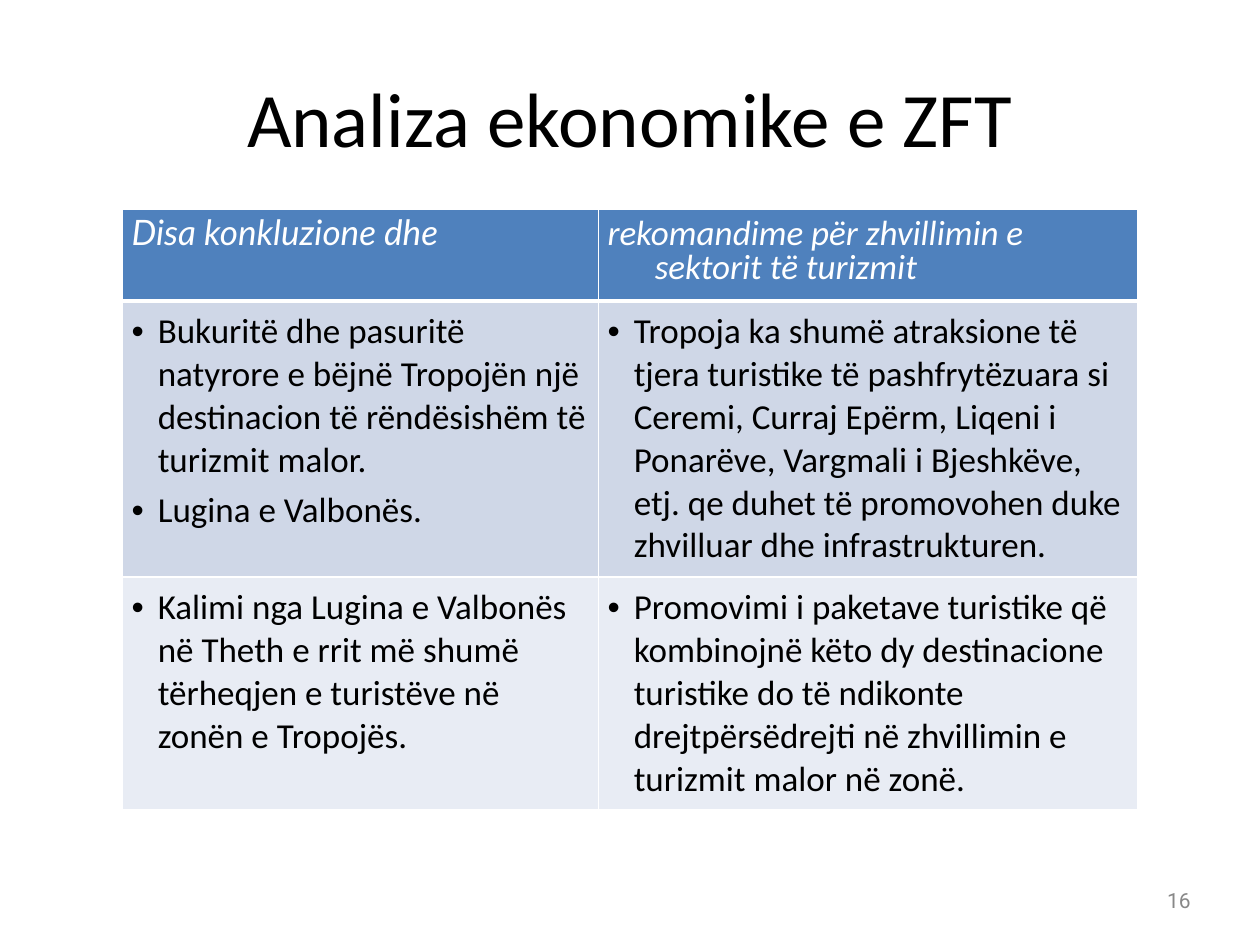
from dataclasses import dataclass

from lxml.etree import SubElement
from pptx import Presentation
from pptx.dml.color import RGBColor
from pptx.enum.text import MSO_ANCHOR, PP_ALIGN
from pptx.oxml import parse_xml
from pptx.oxml.ns import nsdecls, qn
from pptx.util import Pt


@dataclass(frozen=True)
class Theme:
    font: str = "Calibri"
    header_font: str = "Lato"
    number_font: str = "Roboto"
    title_size: int = 44
    body_size: int = 20
    number_size: int = 12
    ink: str = "000000"
    white: str = "FFFFFF"
    muted: str = "888888"
    header_fill: str = "4F81BD"
    row_fills: tuple = ("CFD7E7", "E8ECF4")


THEME = Theme()

HEADERS = [
    ("Disa konkluzione dhe", THEME.header_font, 0),
    ("rekomandime për zhvillimin e sektorit të turizmit", THEME.font, 4),
]
ROWS = [
    [
        ["Bukuritë dhe pasuritë natyrore e bëjnë Tropojën një destinacion "
         "të rëndësishëm të turizmit malor.",
         "Lugina e Valbonës."],
        ["Tropoja ka shumë atraksione të tjera turistike të pashfrytëzuara si "
         "Ceremi, Curraj Epërm, Liqeni i Ponarëve, Vargmali i Bjeshkëve, etj. "
         "qe duhet të promovohen duke zhvilluar dhe infrastrukturen."],
    ],
    [
        ["Kalimi nga Lugina e Valbonës në Theth e rrit më shumë tërheqjen e "
         "turistëve në zonën e Tropojës."],
        ["Promovimi i paketave turistike që kombinojnë këto dy destinacione "
         "turistike do të ndikonte drejtpërsëdrejti në zhvillimin e turizmit "
         "malor në zonë."],
    ],
]


def add_run(p, text, font, size, color, italic=False):
    r = p.add_run()
    r.text = text
    r.font.name = font
    r.font.size = Pt(size)
    r.font.bold = False
    r.font.italic = italic
    r.font.color.rgb = RGBColor.from_string(color)


def set_indent(p, indent, bullet=None):
    """Hanging indent, with an optional bullet in the gap."""
    pPr = p._p.get_or_add_pPr()
    pPr.set("marL", str(Pt(indent)))
    pPr.set("indent", str(-Pt(indent)))
    if bullet:
        SubElement(pPr, qn("a:buFont")).set("typeface", "Arial")
        SubElement(pPr, qn("a:buChar")).set("char", bullet)


def style_cell(cell, fill, top=1, bottom=1):
    cell.margin_left = cell.margin_right = Pt(5.2)
    cell.margin_top = cell.margin_bottom = Pt(5.2)
    cell.vertical_anchor = MSO_ANCHOR.TOP
    cell.fill.solid()
    cell.fill.fore_color.rgb = RGBColor.from_string(fill)
    # Borders come before the fill in the cell properties
    tcPr = cell._tc.get_or_add_tcPr()
    widths = {"lnL": 1, "lnR": 1, "lnT": top, "lnB": bottom}
    for i, (side, width) in enumerate(widths.items()):
        tcPr.insert(i, parse_xml(
            f'<a:{side} {nsdecls("a")} w="{Pt(width)}"><a:solidFill>'
            f'<a:srgbClr val="{THEME.white}"/></a:solidFill></a:{side}>'))


def add_text(s, box, text, font, size, color, align):
    sp = s.shapes.add_textbox(*map(Pt, box))
    tf = sp.text_frame
    tf.word_wrap = True
    tf.vertical_anchor = MSO_ANCHOR.MIDDLE
    tf.margin_left = tf.margin_right = Pt(3.6)
    tf.margin_top = tf.margin_bottom = Pt(3.6)
    p = tf.paragraphs[0]
    p.alignment = align
    add_run(p, text, font, size, color)


def add_title(s, box):
    add_text(s, box, "Analiza ekonomike e ZFT", THEME.font,
             THEME.title_size, THEME.ink, PP_ALIGN.CENTER)


def add_slide_number(s, box):
    add_text(s, box, "16", THEME.number_font,
             THEME.number_size, THEME.muted, PP_ALIGN.RIGHT)


def add_findings_table(s, box):
    left, top, width, height = box
    table = s.shapes.add_table(len(ROWS) + 1, len(HEADERS),
                               *map(Pt, box)).table
    first_col, header_row, first_row = 272, 52.6, 157.7
    for col, w in zip(table.columns, (first_col, width - first_col)):
        col.width = Pt(w)
    row_heights = (header_row, first_row, height - header_row - first_row)
    for row, h in zip(table.rows, row_heights):
        row.height = Pt(h)

    # Header row
    for c, (text, font, space) in enumerate(HEADERS):
        cell = table.cell(0, c)
        style_cell(cell, THEME.header_fill, bottom=3)
        p = cell.text_frame.paragraphs[0]
        p.line_spacing = 0.8
        p.space_before = Pt(space)
        set_indent(p, 27)
        add_run(p, text, font, THEME.body_size, THEME.white, italic=True)

    # Bulleted rows
    for r, (row, fill) in enumerate(zip(ROWS, THEME.row_fills), start=1):
        for c, items in enumerate(row):
            cell = table.cell(r, c)
            style_cell(cell, fill, top=3 if r == 1 else 1)
            tf = cell.text_frame
            for i, text in enumerate(items):
                p = tf.add_paragraph() if i else tf.paragraphs[0]
                p.space_before = Pt(4)
                set_indent(p, 15, "•")
                add_run(p, text, THEME.font, THEME.body_size, THEME.ink)


def main():
    prs = Presentation()
    prs.slide_width, prs.slide_height = Pt(720), Pt(540)
    s = prs.slides.add_slide(prs.slide_layouts[6])
    add_title(s, (36, 7.2, 648, 118.8))
    add_slide_number(s, (516, 504, 168, 21))
    add_findings_table(s, (70, 119.5, 580, 343.5))
    prs.save("out.pptx")


if __name__ == "__main__":
    main()
